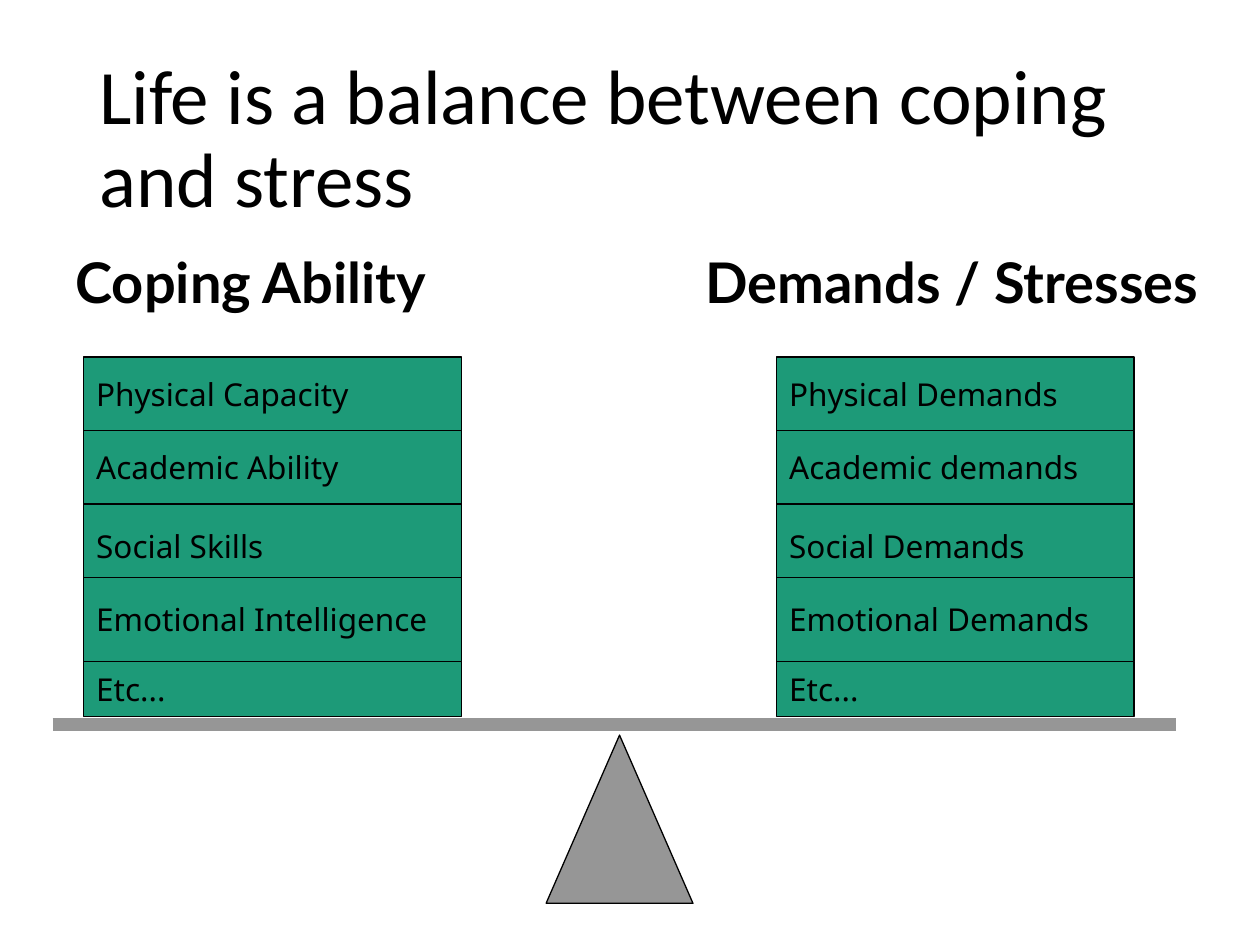
from pptx import Presentation
from pptx.dml.color import RGBColor
from pptx.enum.shapes import MSO_CONNECTOR, MSO_SHAPE
from pptx.enum.text import MSO_ANCHOR, PP_ALIGN
from pptx.oxml.ns import qn
from pptx.util import Cm, Pt
from lxml.etree import SubElement

BLACK = RGBColor(0x00, 0x00, 0x00)
GRAY = RGBColor(0x96, 0x96, 0x96)
GREEN = RGBColor(0x1D, 0x9A, 0x78)

STACK_TOP = 7.2
ROW_PITCH = 1.48
LAST_ROW_TOP = 13.33
ROW_HEIGHTS = (1.48, 1.48, 1.69, 1.69, 1.11)

COPING = ("Physical Capacity", "Academic Ability", "Social Skills",
          "Emotional Intelligence", "Etc...")
DEMANDS = ("Physical Demands", "Academic demands", "Social Demands",
           "Emotional Demands", "Etc...")


class BalanceSlide:
    title_font = "Calibri"
    heading_font = "Lato"
    block_font = "Noto Sans"

    def __init__(self, slide):
        self.shapes = slide.shapes

    def put_text(self, shape, text, font, size, bold=False, anchor=MSO_ANCHOR.MIDDLE):
        frame = shape.text_frame
        frame.word_wrap = True
        frame.vertical_anchor = anchor
        paragraph = frame.paragraphs[0]
        paragraph.alignment = PP_ALIGN.LEFT
        run = paragraph.add_run()
        run.text = text
        run.font.name = font
        run.font.size = Pt(size)
        run.font.bold = bold
        run.font.color.rgb = BLACK
        return paragraph

    def title(self, text, left, top, width, height):
        box = self.shapes.add_textbox(Cm(left), Cm(top), Cm(width), Cm(height))
        self.put_text(box, text, self.title_font, 44).line_spacing = 0.9

    def heading(self, text, left, top, width, height):
        box = self.shapes.add_textbox(Cm(left), Cm(top), Cm(width), Cm(height))
        self.put_text(box, text, self.heading_font, 32, True, MSO_ANCHOR.TOP)

    def solid(self, preset, fill, left, top, width, height):
        shape = self.shapes.add_shape(preset, Cm(left), Cm(top), Cm(width), Cm(height))
        shape.shadow.inherit = False
        shape.fill.solid()
        shape.fill.fore_color.rgb = fill
        shape.line.color.rgb = BLACK
        shape.line.width = Pt(0.75)
        return shape

    def stack(self, labels, left, width):
        for row, (label, height) in enumerate(zip(labels, ROW_HEIGHTS)):
            is_last = row == len(labels) - 1
            top = LAST_ROW_TOP if is_last else STACK_TOP + row * ROW_PITCH
            block = self.solid(MSO_SHAPE.RECTANGLE, GREEN, left, top, width, height)
            self.put_text(block, label, self.block_font, 18)

    def beam(self, left, right, y):
        beam = self.shapes.add_connector(
            MSO_CONNECTOR.STRAIGHT, Cm(left), Cm(y), Cm(right), Cm(y))
        beam.line.color.rgb = GRAY
        beam.line.width = Pt(7.5)
        SubElement(beam.element.spPr, qn("a:effectLst"))


def main():
    presentation = Presentation()
    presentation.slide_width = Cm(25.4)
    presentation.slide_height = Cm(19.05)
    balance = BalanceSlide(presentation.slides.add_slide(presentation.slide_layouts[6]))

    balance.title("Life is a balance between coping and stress", 1.75, 1.01, 21.9, 3.68)
    balance.solid(MSO_SHAPE.ISOSCELES_TRIANGLE, GRAY, 11.01, 14.82, 2.96, 3.39)
    balance.beam(1.06, 23.71, 14.6)
    balance.heading("Demands / Stresses", 13.97, 4.87, 10.8, 1.6)
    balance.heading("Coping Ability", 1.27, 4.87, 7.85, 1.6)
    balance.stack(COPING, 1.69, 7.62)
    balance.stack(DEMANDS, 15.66, 7.2)

    presentation.save("out.pptx")


if __name__ == "__main__":
    main()
